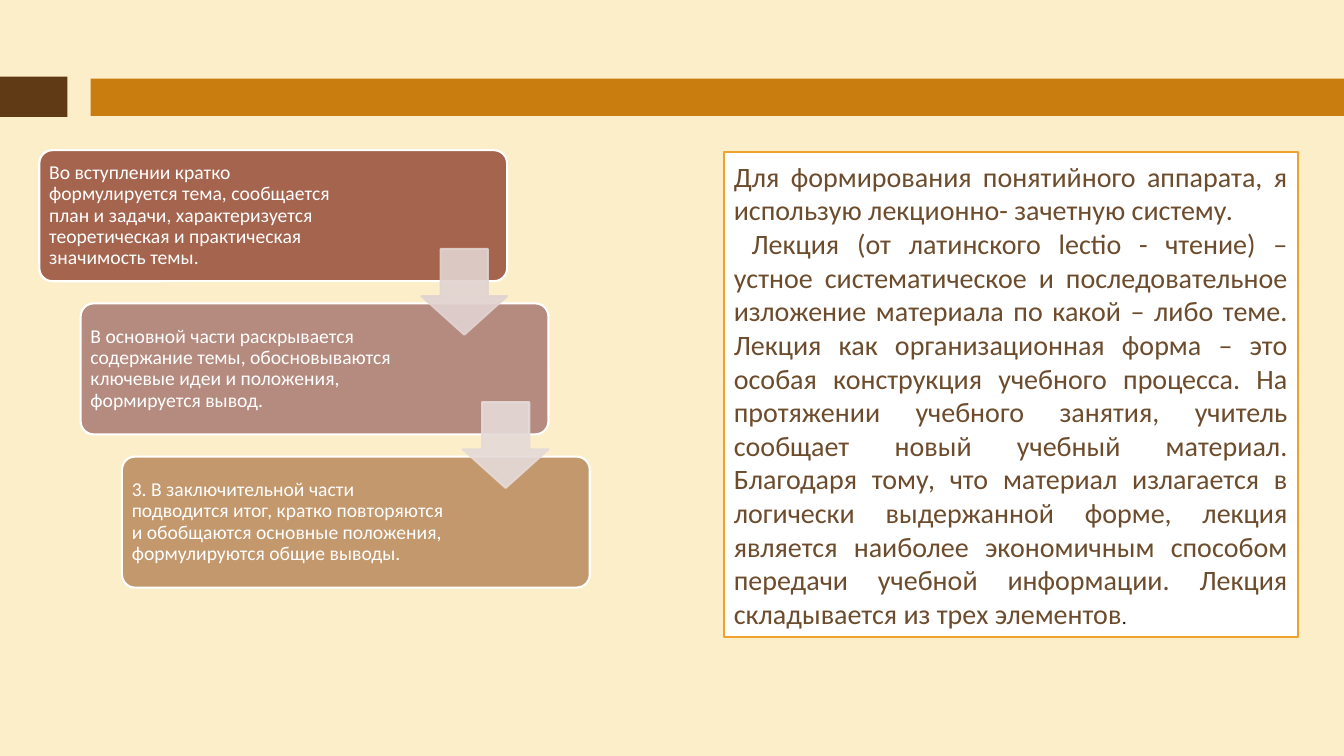
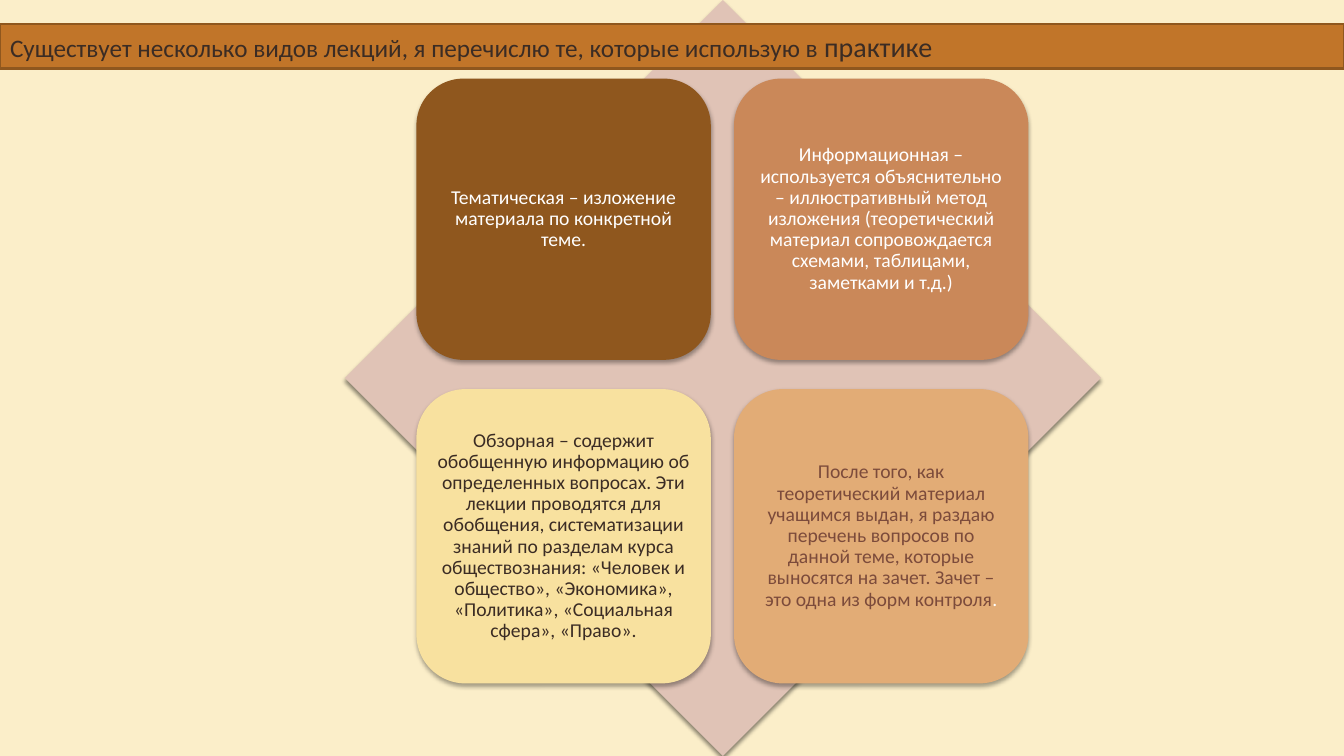
import dataclasses

import lxml.etree
import pptx
import pptx.dml.color
import pptx.enum.shapes
import pptx.enum.text
import pptx.oxml.ns
import pptx.util

Inches = pptx.util.Inches
SHAPE = pptx.enum.shapes.MSO_SHAPE
ALIGN = pptx.enum.text.PP_ALIGN
ANCHOR = pptx.enum.text.MSO_ANCHOR


@dataclasses.dataclass(frozen=True)
class Theme:
    font: str = "Calibri"
    background: str = "FBEEC9"
    white: str = "FFFFFF"
    dark_text: str = "3B2C24"
    body_text: str = "6C4C2C"
    near_black: str = "0D0D0D"
    red_brown_text: str = "7C4B3B"
    band: str = "C87D0E"
    band_block: str = "603A14"
    panel_line: str = "F0A22E"
    title_fill: str = "C17529"
    brown: str = "8F571E"
    diamond: str = "E0C3B6"
    steps: tuple = ("A5644E", "B58B80", "C3986D")
    arrows: tuple = ("E1D3D0", "E5DAD8")
    cards: tuple = ("8F571E", "CA8859", "F8E19F", "E2AC76")
    small: int = 14
    heading: int = 18
    body: int = 20
    line_width: float = 1.5


THEME = Theme()

# Text: each paragraph is a list of (text, size, colour) runs
STEPS = [
    ("Во вступлении кратко формулируется тема, сообщается план и задачи, "
     "характеризуется теоретическая и практическая значимость темы.", 3.23),
    ("В основной части раскрывается содержание темы, обосновываются "
     "ключевые идеи и положения, формируется вывод.", 3.31),
    ("3. В заключительной части подводится итог, кратко повторяются "
     "и обобщаются основные положения, формулируются общие выводы.", 3.31),
]
LECTURE = [
    [("Для формирования понятийного аппарата, я использую лекционно- зачетную систему.",
      THEME.body, THEME.body_text)],
    [(" Лекция (от латинского lectio - чтение) – устное систематическое и "
      "последовательное изложение материала по какой – либо теме. Лекция как "
      "организационная форма – это особая конструкция учебного процесса. На "
      "протяжении учебного занятия, учитель сообщает новый учебный материал. "
      "Благодаря тому, что материал излагается в логически выдержанной форме, "
      "лекция является наиболее экономичным способом передачи учебной "
      "информации. Лекция складывается из трех элементов",
      THEME.body, THEME.body_text),
     (".", THEME.small, THEME.near_black)],
]
TITLE = [[
    ("Существует несколько видов лекций, я перечислю те, которые использую в ",
     THEME.heading, THEME.dark_text),
    ("практике", THEME.body, THEME.dark_text),
]]
CARDS = [
    [("Тематическая – изложение материала по конкретной теме.",
      THEME.small, THEME.white)],
    [("Информационная – используется объяснительно – иллюстративный метод "
      "изложения (теоретический материал сопровождается схемами, таблицами, "
      "заметками и т.д.)", THEME.small, THEME.white)],
    [("Обзорная – содержит обобщенную информацию об определенных вопросах. Эти "
      "лекции проводятся для обобщения, систематизации знаний по разделам курса "
      "обществознания: «Человек и общество», «Экономика», «Политика», "
      "«Социальная сфера», «Право».", THEME.small, THEME.dark_text)],
    [("После того, как теоретический материал учащимся выдан, я раздаю перечень "
      "вопросов по данной теме, которые выносятся на зачет. Зачет – это одна из "
      "форм контроля", THEME.small, THEME.red_brown_text),
     (".", THEME.small, THEME.white)],
]


def rgb(value):
    return pptx.dml.color.RGBColor.from_string(value)


def set_all(target, values):
    for name, value in values.items():
        setattr(target, name, value)


def add_alpha(parent, percent):
    """Make every colour inside the element partly transparent."""
    for color in list(parent.iter(pptx.oxml.ns.qn("a:srgbClr"))):
        alpha = lxml.etree.SubElement(color, pptx.oxml.ns.qn("a:alpha"))
        alpha.set("val", str(percent * 1000))


def add_shadow(shape, percent, distance):
    """Cast a soft shadow straight down; blur and distance are in points."""
    effects = shape._element.spPr.find(pptx.oxml.ns.qn("a:effectLst"))
    shadow = lxml.etree.SubElement(effects, pptx.oxml.ns.qn("a:outerShdw"))
    for name, value in {"blurRad": pptx.util.Pt(3), "dist": pptx.util.Pt(distance),
                        "dir": 90 * 60000, "rotWithShape": 0}.items():
        shadow.set(name, str(int(value)))
    color = lxml.etree.SubElement(shadow, pptx.oxml.ns.qn("a:srgbClr"))
    color.set("val", "000000")
    add_alpha(shadow, percent)


def paint(shape, fill, line=None):
    shape.fill.solid()
    shape.fill.fore_color.rgb = rgb(fill)
    if line:
        shape.line.color.rgb = rgb(line)
        shape.line.width = pptx.util.Pt(THEME.line_width)
    else:
        shape.line.fill.background()


def add_box(slide, kind, box, fill, line=None, adjustments=()):
    shape = slide.shapes.add_shape(kind, *map(Inches, box))
    shape.shadow.inherit = False
    paint(shape, fill, line)
    for index, value in enumerate(adjustments):
        shape.adjustments[index] = value
    return shape


def write(shape, paragraphs, align=ALIGN.LEFT, spacing=1.0, margins=None):
    frame = shape.text_frame
    set_all(frame, {"word_wrap": True, "vertical_anchor": ANCHOR.MIDDLE,
                    "auto_size": pptx.enum.text.MSO_AUTO_SIZE.NONE})
    set_all(frame, {f"margin_{side}": Inches(value)
                    for side, value in (margins or {}).items()})
    for index, runs in enumerate(paragraphs):
        paragraph = frame.add_paragraph() if index else frame.paragraphs[0]
        set_all(paragraph, {"alignment": align, "line_spacing": spacing})
        for text, size, color in runs:
            run = paragraph.add_run()
            run.text = text
            set_all(run.font, {"name": THEME.font, "size": pptx.util.Pt(size)})
            run.font.color.rgb = rgb(color)


def even_margins(value):
    return dict.fromkeys(("left", "top", "right", "bottom"), value)


def add_steps(slide):
    """Staircase of rounded boxes joined by block arrows."""
    left, top, width, height = 0.39, 1.49, 4.64, 1.3
    shift, pitch, arrow, inset, corner = 0.41, 1.52, 0.85, 0.06, 0.04
    positions = [(left + shift * index, top + pitch * index)
                 for index in range(len(STEPS))]
    for (x, y), (text, text_width), fill in zip(positions, STEPS, THEME.steps):
        box = add_box(slide, SHAPE.ROUNDED_RECTANGLE, (x, y, width, height),
                      fill, THEME.white, [0.1])
        margins = even_margins(inset)
        margins["right"] = width - 2 * corner - text_width + inset
        write(box, [[(text, THEME.small, THEME.white)]], spacing=0.9, margins=margins)
    for (x, y), color in zip(positions, THEME.arrows):
        shape = add_box(slide, SHAPE.DOWN_ARROW,
                        (x + width - arrow, y + 0.98, arrow, arrow),
                        color, color, [0.55, 0.45])
        add_alpha(shape._element.spPr, 90)


def add_cards(slide):
    """Two by two grid of cards on a diamond."""
    diamond = add_box(slide, SHAPE.DIAMOND, (3.42, 0, 7.5, 7.5), THEME.diamond)
    add_shadow(diamond, 45, 2.4)
    columns, rows, width = (4.13, 7.28), ((0.78, 2.79), (3.86, 2.92)), 2.92
    cells = [(x, y, width, height) for y, height in rows for x in columns]
    for cell, runs, fill in zip(cells, CARDS, THEME.cards):
        card = add_box(slide, SHAPE.ROUNDED_RECTANGLE, cell, fill)
        add_shadow(card, 35, 2)
        write(card, [runs], ALIGN.CENTER, 0.9, even_margins(0.06))


def add_title(slide):
    """Full-width title band, in front of the shapes already drawn."""
    title = slide.shapes.title
    set_all(title, {"left": Inches(0), "top": Inches(0.24),
                    "width": Inches(13.33), "height": Inches(0.44)})
    paint(title, THEME.title_fill, THEME.brown)
    write(title, TITLE)
    slide.shapes._spTree.append(title._element)


def build_structure_slide(presentation):
    slide = presentation.slides.add_slide(presentation.slide_layouts.get_by_name("Blank"))
    add_steps(slide)
    # Header band
    add_box(slide, SHAPE.RECTANGLE, (0.9, 0.78, 12.43, 0.37), THEME.band)
    add_box(slide, SHAPE.RECTANGLE, (0, 0.76, 0.67, 0.4), THEME.band_block)
    # Lecture description
    panel = add_box(slide, SHAPE.RECTANGLE, (7.18, 1.51, 5.69, 4.81),
                    THEME.white, THEME.panel_line)
    write(panel, LECTURE, ALIGN.JUSTIFY)


def build_types_slide(presentation):
    slide = presentation.slides.add_slide(presentation.slide_layouts.get_by_name("Title Only"))
    add_cards(slide)
    add_title(slide)


def main():
    presentation = pptx.Presentation()
    set_all(presentation, {"slide_width": Inches(13.33), "slide_height": Inches(7.5)})
    background = presentation.slide_master.background.fill
    background.solid()
    background.fore_color.rgb = rgb(THEME.background)
    build_structure_slide(presentation)
    build_types_slide(presentation)
    presentation.save("out.pptx")


if __name__ == "__main__":
    main()
